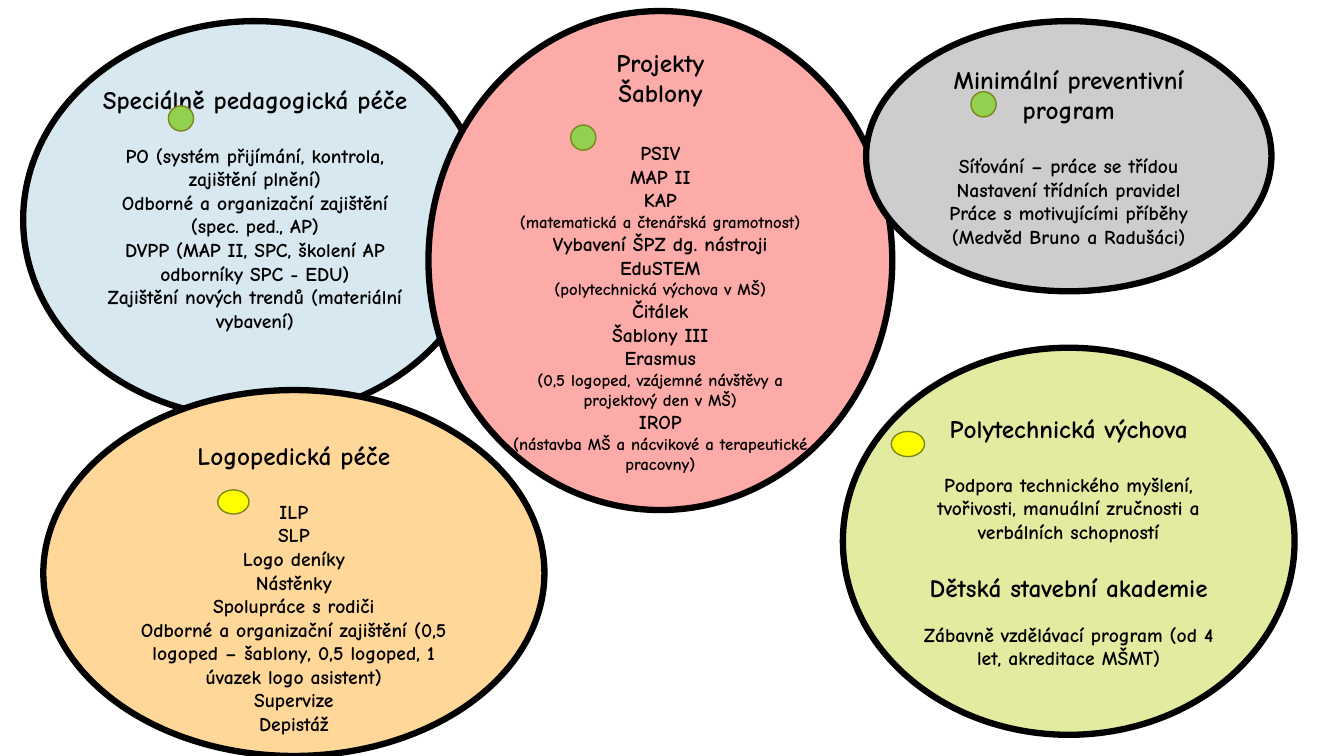
from pptx import Presentation
from pptx.dml.color import RGBColor
from pptx.enum.shapes import MSO_SHAPE
from pptx.enum.text import MSO_ANCHOR, PP_ALIGN
from pptx.util import Inches, Pt

FONT = "Comic Neue"
HEADING, BODY, DETAIL = 18, 14, 12
GREEN, YELLOW = "92D050", "FFFF00"

# Each line of text is (wording, size, space before in points).
# A marker is (left, top, width, height, fill), offset from its bubble.
BUBBLES = [
    {
        "box": (8.36, 3.45, 4.48, 3.84), "fill": "E2EBA0",
        "marker": (0.48, 0.83, 0.33, 0.25, YELLOW),
        "lines": [
            ("Polytechnická výchova", HEADING, 0),
            ("Podpora technického myšlení, tvořivosti, manuální zručnosti "
             "a verbálních schopností", BODY, 21),
            ("Dětská stavební akademie", HEADING, 21),
            ("Zábavně vzdělávací program (od 4 let, akreditace MŠMT)", BODY, 14),
        ],
    },
    {
        "box": (0.23, 0.21, 4.6, 3.94), "fill": "D8E8F1",
        "marker": (1.44, 0.84, 0.25, 0.25, GREEN),
        "margins": {"margin_bottom": 0.28},
        "lines": [
            ("Speciálně pedagogická péče", HEADING, 0),
            ("PO (systém přijímání, kontrola, zajištění plnění)", BODY, 21),
            ("Odborné a organizační zajištění (spec. ped., AP)", BODY, 0),
            ("DVPP (MAP II, SPC, školení AP odborníky SPC - EDU)", BODY, 0),
            ("Zajištění nových trendů (materiální vybavení)", BODY, 0),
        ],
    },
    {
        "box": (0.43, 3.87, 4.97, 3.63), "fill": "FFD899",
        "marker": (1.73, 0.99, 0.31, 0.24, YELLOW),
        "margins": {"margin_top": 0.34},
        "lines": [
            ("Logopedická péče", HEADING, 0),
            ("ILP", BODY, 21),
            ("SLP", BODY, 0),
            ("Logo deníky", BODY, 0),
            ("Nástěnky", BODY, 0),
            ("Spolupráce s rodiči", BODY, 0),
            ("Odborné a organizační zajištění (0,5 logoped – šablony, "
             "0,5 logoped, 1 úvazek logo asistent)", BODY, 0),
            ("Supervize", BODY, 0),
            ("Depistáž", BODY, 0),
        ],
    },
    {
        "box": (4.25, 0.11, 4.6, 4.95), "fill": "FDABA9",
        "marker": (1.41, 1.13, 0.25, 0.25, GREEN),
        "lines": [
            ("Projekty", HEADING, 0),
            ("Šablony", HEADING, 0),
            ("PSIV", BODY, 24),
            ("MAP II", BODY, 0),
            ("KAP", BODY, 0),
            ("(matematická a čtenářská gramotnost)", DETAIL, 0),
            ("Vybavení ŠPZ dg. nástroji", BODY, 0),
            ("EduSTEM", BODY, 0),
            ("(polytechnická výchova v MŠ)", DETAIL, 0),
            ("Čitálek", BODY, 0),
            ("Šablony III", BODY, 0),
            ("Erasmus", BODY, 0),
            ("(0,5 logoped, vzájemné návštěvy a projektový den v MŠ)", DETAIL, 0),
            ("IROP", BODY, 0),
            ("(nástavba MŠ a nácvikové a terapeutické pracovny)", DETAIL, 0),
        ],
    },
    {
        "box": (8.59, 0.21, 4.02, 2.68), "fill": "CDCDCD",
        "marker": (1.04, 0.7, 0.25, 0.25, GREEN),
        "lines": [
            ("Minimální preventivní program", HEADING, 0),
            ("Síťování – práce se třídou", BODY, 21),
            ("Nastavení třídních pravidel", BODY, 0),
            ("Práce s motivujícími příběhy (Medvěd Bruno a Radušáci)", BODY, 0),
        ],
    },
]


def color(hex_value):
    return RGBColor.from_string(hex_value)


def set_attributes(target, values):
    for name, value in values.items():
        setattr(target, name, value)


def add_ellipse(slide, box, fill, line_color, line_width):
    shape = slide.shapes.add_shape(MSO_SHAPE.OVAL, *map(Inches, box))
    shape.shadow.inherit = False
    shape.fill.solid()
    shape.fill.fore_color.rgb = color(fill)
    shape.line.color.rgb = color(line_color)
    shape.line.width = Pt(line_width)
    return shape


def write_lines(text_frame, lines):
    for index, (wording, size, space_before) in enumerate(lines):
        paragraph = text_frame.paragraphs[0] if index == 0 else text_frame.add_paragraph()
        paragraph.text = wording
        set_attributes(paragraph, {"alignment": PP_ALIGN.CENTER,
                                   "space_before": Pt(space_before)})
        set_attributes(paragraph.font, {"name": FONT, "size": Pt(size), "bold": True})
        paragraph.font.color.rgb = color("000000")


def add_bubble(slide, bubble):
    shape = add_ellipse(slide, bubble["box"], bubble["fill"], "000000", 4.5)
    text_frame = shape.text_frame
    set_attributes(text_frame, {"word_wrap": True, "vertical_anchor": MSO_ANCHOR.MIDDLE})
    margins = bubble.get("margins", {})
    set_attributes(text_frame, {side: Inches(size) for side, size in margins.items()})
    write_lines(text_frame, bubble["lines"])


def add_marker(slide, bubble):
    bubble_left, bubble_top = bubble["box"][:2]
    left, top, width, height, fill = bubble["marker"]
    box = (bubble_left + left, bubble_top + top, width, height)
    add_ellipse(slide, box, fill, "7B871D", 1)


def main():
    presentation = Presentation()
    set_attributes(presentation, {"slide_width": Inches(13.33),
                                  "slide_height": Inches(7.5)})
    slide = presentation.slides.add_slide(presentation.slide_layouts[6])
    for bubble in BUBBLES:
        add_bubble(slide, bubble)
    for bubble in BUBBLES:
        add_marker(slide, bubble)
    presentation.save("out.pptx")


if __name__ == "__main__":
    main()
